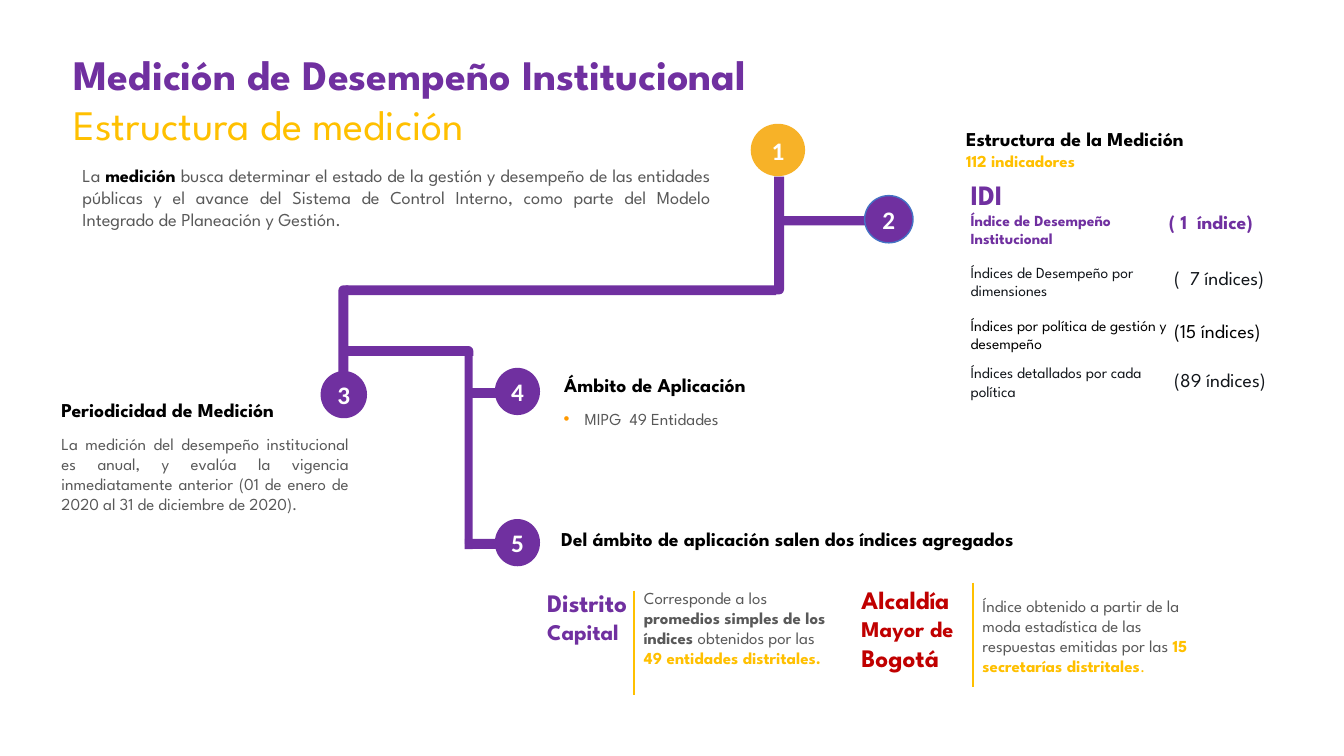
from lxml import etree
from pptx import Presentation
from pptx.dml.color import RGBColor
from pptx.enum.shapes import MSO_CONNECTOR, MSO_SHAPE
from pptx.enum.text import MSO_ANCHOR, MSO_AUTO_SIZE, PP_ALIGN
from pptx.oxml.ns import qn
from pptx.util import Cm, Pt

PURPLE = RGBColor(0x70, 0x30, 0xA0)
GOLD = RGBColor(0xFF, 0xC0, 0x00)
AMBER = RGBColor(0xF7, 0xB2, 0x28)
RED = RGBColor(0xC0, 0x00, 0x00)
GREY = RGBColor(0x59, 0x59, 0x59)
INK = RGBColor(0x11, 0x15, 0x1A)
BLACK = RGBColor(0x00, 0x00, 0x00)
WHITE = RGBColor(0xFF, 0xFF, 0xFF)
BLUE = RGBColor(0x44, 0x72, 0xC4)
BULLET = "FF9900"

LEFT, CENTER, JUSTIFY = PP_ALIGN.LEFT, PP_ALIGN.CENTER, PP_ALIGN.JUSTIFY
TOP, MIDDLE = MSO_ANCHOR.TOP, MSO_ANCHOR.MIDDLE
NO_FIT, GROW = MSO_AUTO_SIZE.NONE, MSO_AUTO_SIZE.SHAPE_TO_FIT_TEXT
OVAL, BAR, ROUND_BAR = MSO_SHAPE.OVAL, MSO_SHAPE.RECTANGLE, MSO_SHAPE.ROUND_1_RECTANGLE
STRAIGHT = MSO_CONNECTOR.STRAIGHT


def write(sp, *paragraphs, size=12, color=GREY, bold=False, font="League Spartan",
          align=LEFT, anchor=TOP, wrap=True, fit=NO_FIT, after=0):
    """Write paragraphs, each a string or a list of (text, format) runs."""
    tf = sp.text_frame
    tf.word_wrap, tf.auto_size, tf.vertical_anchor = wrap, fit, anchor
    for i, runs in enumerate(paragraphs):
        p = tf.paragraphs[0] if i == 0 else tf.add_paragraph()
        p.alignment, p.space_before, p.space_after = align, Pt(0), Pt(after)
        for text, own in [(runs, {})] if isinstance(runs, str) else runs:
            r = p.add_run()
            r.text = text
            r.font.name = font
            r.font.size = Pt(own.get("size", size))
            r.font.bold = own.get("bold", bold)
            r.font.color.rgb = own.get("color", color)


def text_box(s, x, y, w, h, *paragraphs, fit=GROW, **fmt):
    """Add a text box, in centimetres."""
    sp = s.shapes.add_textbox(Cm(x), Cm(y), Cm(w), Cm(h))
    write(sp, *paragraphs, fit=fit, **fmt)


def heading(s, x, y, w, text):
    """Add a one-line section heading."""
    text_box(s, x, y, w, 0.86, text, size=14, color=BLACK, bold=True, wrap=False)


def solid(s, kind, x, y, w, h, fill):
    """Add a filled preset shape without outline or shadow."""
    sp = s.shapes.add_shape(kind, Cm(x), Cm(y), Cm(w), Cm(h))
    sp.shadow.inherit = False
    sp.fill.solid()
    sp.fill.fore_color.rgb = fill
    sp.line.fill.background()
    return sp


def place(sp, x, y, w, h):
    """Move a placeholder to a box in centimetres."""
    sp.left, sp.top, sp.width, sp.height = Cm(x), Cm(y), Cm(w), Cm(h)


def header(s, x, y):
    """Fill the title and the introduction under it."""
    place(s.shapes.title, x, y, 25.35, 2.82)
    write(s.shapes.title,
          [("Medición de Desempeño Institucional", {"bold": True, "color": PURPLE})],
          "Estructura de medición", size=30, color=GOLD)
    text_box(s, x + 0.23, y + 2.92, 16.31, 2.49,
             [("La ", {}), ("medición ", {"bold": True, "color": BLACK}),
              ("busca determinar el estado de la gestión y desempeño de las entidades "
               "públicas y el avance del Sistema de Control Interno, como parte del "
               "Modelo Integrado de Planeación y Gestión.", {})],
             size=13, align=JUSTIFY)


def route(s, x, y):
    """Draw the connected bars and the five numbered stops."""
    bars = [
        (ROUND_BAR, 11.51, 1.45, 0.25, 2.97, ["flipV"]),
        (BAR, 11.65, 2.45, 2.69, 0.23, []),
        (BAR, 0.71, 4.19, 10.85, 0.25, []),
        (ROUND_BAR, 0.53, 4.19, 0.25, 2.57, ["flipH"]),
        (ROUND_BAR, 0.65, 5.72, 3.28, 0.25, []),
        (BAR, 3.71, 5.86, 0.2, 4.98, []),
        (BAR, 3.81, 6.78, 1.12, 0.25, []),
        (ROUND_BAR, 3.72, 10.58, 1.45, 0.25, ["flipH", "flipV"]),
    ]
    for kind, dx, dy, w, h, flips in bars:
        sp = solid(s, kind, x + dx, y + dy, w, h, PURPLE)
        if kind == ROUND_BAR:
            sp.adjustments[0] = 0.5
        for flip in flips:
            sp.element.spPr.get_or_add_xfrm().set(flip, "1")
    stops = [
        (10.92, 0.12, 1.37, 1.32, AMBER),
        (13.79, 1.93, 1.22, 1.19, PURPLE),
        (0.08, 6.35, 1.17, 1.19, PURPLE),
        (4.47, 6.27, 1.14, 1.19, PURPLE),
        (4.47, 10.08, 1.14, 1.19, PURPLE),
    ]
    for number, (dx, dy, w, h, fill) in enumerate(stops, 1):
        sp = solid(s, OVAL, x + dx, y + dy, w, h, fill)
        if number == 2:
            sp.line.color.rgb = BLUE
            sp.line.width = Pt(1)
        tf = sp.text_frame
        tf.margin_left = tf.margin_right = tf.margin_top = tf.margin_bottom = 0
        write(sp, str(number), size=18, color=WHITE, bold=True, font="Calibri",
              align=CENTER, anchor=MIDDLE)


def measurement(s, x, y):
    """List the index levels with their counts."""
    text_box(s, x, y, 6.65, 1.37, [("Estructura de la Medición", {"size": 14, "color": BLACK})],
             "112 indicadores", color=GOLD, bold=True, wrap=False)
    text_box(s, x + 0.11, y + 1.27, 4.8, 2.06, [("IDI", {"size": 20})],
             "Índice de Desempeño Institucional", size=11, color=PURPLE, bold=True)
    text_box(s, x + 5.11, y + 2.09, 3.1, 0.86, "( 1  índice)",
             size=14, color=PURPLE, bold=True, wrap=False)
    levels = [
        ("Índices de Desempeño por dimensiones", 2.95, 5, 2.13, "(  7 índices)", 3.51, INK),
        ("Índices por política de gestión y desempeño", 4.7, 5.51, 1.32,
         "(15 índices)", 4.85, BLACK),
        ("Índices detallados por cada política", 6.02, 5.51, 1.07, "(89 índices)", 6.07, INK),
    ]
    for name, dy, w, h, count, count_dy, color in levels:
        text_box(s, x + 0.11, y + dy, w, h, name, size=11, color=color,
                 anchor=MIDDLE, fit=NO_FIT)
        text_box(s, x + 5.24, y + count_dy, 3.33, 0.86, count, size=14, color=color, wrap=False)


def periodicity(s, x, y):
    """Describe how often the measurement is made."""
    heading(s, x, y, 6.81, "Periodicidad de Medición")
    text_box(s, x, y + 0.89, 7.75, 2.82,
             "La medición del desempeño institucional es anual, y evalúa la vigencia "
             "inmediatamente anterior (01 de enero de 2020 al 31 de diciembre de 2020).",
             align=JUSTIFY)


def scope(s, x, y):
    """Place the scope heading and its bulleted list."""
    heading(s, x, y, 5.84, "Ámbito de Aplicación")
    body = s.placeholders[1]
    place(body, x - 0.48, y + 0.89, 10.19, 0.76)
    write(body, "MIPG  49 Entidades", align=JUSTIFY, after=6)
    pPr = body.text_frame.paragraphs[0]._p.get_or_add_pPr()
    pPr.set("marL", str(Cm(0.99)))
    pPr.set("indent", str(-Cm(0.53)))
    color = etree.SubElement(pPr, qn("a:buClr"))
    etree.SubElement(color, qn("a:srgbClr"), val=BULLET)
    etree.SubElement(pPr, qn("a:buFont"), typeface="Arial")
    etree.SubElement(pPr, qn("a:buChar"), char="•")


def aggregate(s, x, y, name, color, name_w, split, rule_dy, text, text_dy, text_w):
    """Place an index name, a vertical rule and its explanation."""
    text_box(s, x, y, name_w, 1.7, name, size=18, color=color, bold=True)
    text_box(s, x + split, y + text_dy, text_w, 2.31, text)
    top = y + rule_dy
    line = s.shapes.add_connector(STRAIGHT, Cm(x + split), Cm(top), Cm(x + split), Cm(top + 2.64))
    line.line.color.rgb = GOLD
    line.line.width = Pt(1.5)
    etree.SubElement(line.element.spPr, qn("a:effectLst"))


def aggregates(s, x, y):
    """Place the two aggregated indexes under their heading."""
    heading(s, x + 0.35, y, 13.84, "Del ámbito de aplicación salen dos índices agregados")
    key = {"bold": True, "color": GOLD}
    aggregate(s, x, y + 1.52, [("Distrito", {}), (" Capital", {"size": 16})],
              PURPLE, 3.25, 2.44, 0.2,
              [("Corresponde a los ", {}), ("promedios simples de los índices ", {"bold": True}),
               ("obtenidos por las ", {}), ("49 entidades distritales.", key)], 0, 5.11)
    aggregate(s, x + 7.92, y + 1.45,
              [("Alcaldía", {}), (" Mayor de ", {"size": 16}), ("Bogotá", {})],
              RED, 3.58, 3.05, 0.07,
              [("Índice obtenido a partir de la moda estadística de las respuestas "
                "emitidas por las ", {}), ("15 secretarías distritales", key),
               (".", {"color": GOLD})], 0.27, 6.1)


def main():
    """Build and save the slide."""
    prs = Presentation()
    prs.slide_width, prs.slide_height = Cm(33.87), Cm(19.05)
    s = prs.slides.add_slide(prs.slide_layouts[1])
    header(s, 1.6, 1.09)
    route(s, 8, 3)
    measurement(s, 24.1, 3.07)
    periodicity(s, 1.3, 9.91)
    scope(s, 13.97, 9.27)
    aggregates(s, 13.54, 13.16)
    prs.save("out.pptx")


if __name__ == "__main__":
    main()
